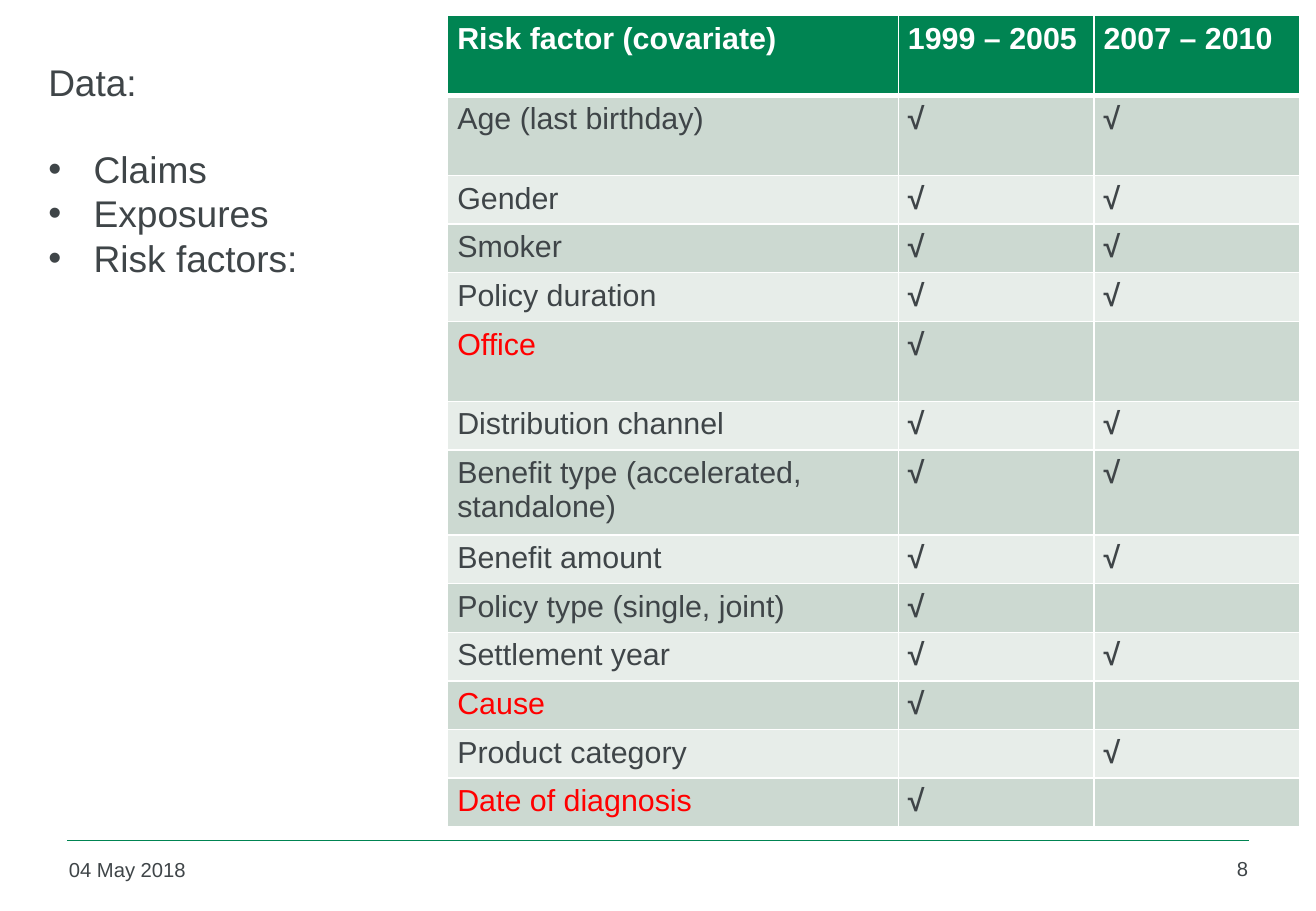
"""Build a slide listing claims data and the risk factors available in each period."""
from pptx import Presentation
from pptx import util as u
from pptx.dml.color import RGBColor
from pptx.enum import shapes, text
from pptx.oxml.ns import qn
from lxml import etree

FONT = "Arial"
GREEN = RGBColor(0x00, 0x84, 0x52)
INK = RGBColor(0x3F, 0x45, 0x48)
RED = RGBColor(0xFF, 0x00, 0x00)
WHITE = RGBColor(0xFF, 0xFF, 0xFF)
BANDS = (RGBColor(0xCC, 0xD9, 0xD1), RGBColor(0xE7, 0xED, 0xE9))

HEADING = "Data:"
BULLETS = ["Claims", "Exposures", "Risk factors:"]
DATE, PAGE_NUMBER = "04 May 2018", "8"

TALL, SHORT, MEDIUM = 1.67, 0.97, 1.0
BOTH, EARLY, LATE = ("√", "√"), ("√", ""), ("", "√")
HEADER = ("Risk factor (covariate)", "1999 – 2005", "2007 – 2010")
FACTORS = [
    ("Age (last birthday)", BOTH, INK, TALL),
    ("Gender", BOTH, INK, SHORT),
    ("Smoker", BOTH, INK, SHORT),
    ("Policy duration", BOTH, INK, SHORT),
    ("Office", EARLY, RED, TALL),
    ("Distribution channel", BOTH, INK, SHORT),
    ("Benefit type (accelerated, standalone)", BOTH, INK, TALL),
    ("Benefit amount", BOTH, INK, SHORT),
    ("Policy type (single, joint)", EARLY, INK, MEDIUM),
    ("Settlement year", BOTH, INK, MEDIUM),
    ("Cause", EARLY, RED, MEDIUM),
    ("Product category", LATE, INK, MEDIUM),
    ("Date of diagnosis", EARLY, RED, MEDIUM),
]
COLUMN_WIDTHS = (9.42, 4.09, 4.29)


def style(para, size, color=INK, bold=False):
    para.font.name = FONT
    para.font.size = u.Pt(size)
    para.font.color.rgb = color
    para.font.bold = bold


def add_text(page, left, top, width, height, lines, size):
    box = page.shapes.add_textbox(u.Cm(left), u.Cm(top), u.Cm(width), u.Cm(height))
    frame = box.text_frame
    frame.word_wrap = True
    frame.text = "\n".join(lines)
    for para in frame.paragraphs:
        style(para, size)
    return frame


def add_bullet(para):
    props = para._p.get_or_add_pPr()
    props.set("marL", str(u.Cm(0.95)))
    props.set("indent", str(-u.Cm(0.95)))
    bullet_font = etree.Element(qn("a:buFont"), typeface=FONT)
    bullet = etree.Element(qn("a:buChar"), char="•")
    props.insert(0, bullet_font)
    bullet_font.addnext(bullet)


def set_borders(cell, top, bottom):
    props = cell._tc.get_or_add_tcPr()
    for side, width in (("L", 1), ("R", 1), ("T", top), ("B", bottom)):
        line = etree.SubElement(props, qn("a:ln" + side), w=str(u.Pt(width)))
        fill = etree.SubElement(line, qn("a:solidFill"))
        etree.SubElement(fill, qn("a:srgbClr"), val=str(WHITE))


def fill_cell(cell, words, fill, color, bold, top=1, bottom=1):
    set_borders(cell, top, bottom)
    cell.fill.solid()
    cell.fill.fore_color.rgb = fill
    cell.margin_left = cell.margin_right = u.Cm(0.2)
    cell.text = words
    style(cell.text_frame.paragraphs[0], 18, color, bold)


def add_factor_table(page):
    heights = [TALL] + [factor[3] for factor in FACTORS]
    frame = page.shapes.add_table(
        len(heights), len(HEADER), u.Cm(9.36), u.Cm(0.33),
        u.Cm(sum(COLUMN_WIDTHS)), u.Cm(sum(heights)))
    table = frame.table
    table.horz_banding = False
    for column, width in zip(table.columns, COLUMN_WIDTHS):
        column.width = u.Cm(width)
    for row, height in zip(table.rows, heights):
        row.height = u.Cm(height)
    for col, words in enumerate(HEADER):
        fill_cell(table.cell(0, col), words, GREEN, WHITE, True, bottom=3)
    for index, (name, marks, color, _) in enumerate(FACTORS):
        band = BANDS[index % 2]
        top = 1 if index else 3
        fill_cell(table.cell(index + 1, 0), name, band, color, False, top)
        for col, mark in enumerate(marks, 1):
            fill_cell(table.cell(index + 1, col), mark, band, INK, True, top)


def main():
    deck = Presentation()
    deck.slide_width, deck.slide_height = u.Cm(27.51), u.Cm(19.05)
    page = deck.slides.add_slide(deck.slide_layouts[6])

    rule = page.shapes.add_connector(
        shapes.MSO_CONNECTOR.STRAIGHT, u.Cm(1.4), u.Cm(17.58), u.Cm(26.11), u.Cm(17.58))
    rule.line.color.rgb = GREEN
    rule.line.width = u.Pt(1)
    etree.SubElement(rule._element.spPr, qn("a:effectLst"))

    add_text(page, 1.19, 17.81, 6.07, 0.91, [DATE], 12)
    number = add_text(page, 24.38, 17.78, 1.96, 0.94, [PAGE_NUMBER], 12)
    number.paragraphs[0].alignment = text.PP_ALIGN.RIGHT

    add_factor_table(page)

    data = add_text(page, 0.76, 1.12, 8.2, 4.95, [HEADING] + BULLETS, 22)
    data.paragraphs[0].space_after = u.Pt(25)
    for para in data.paragraphs[1:]:
        add_bullet(para)

    deck.save("out.pptx")


if __name__ == "__main__":
    main()
